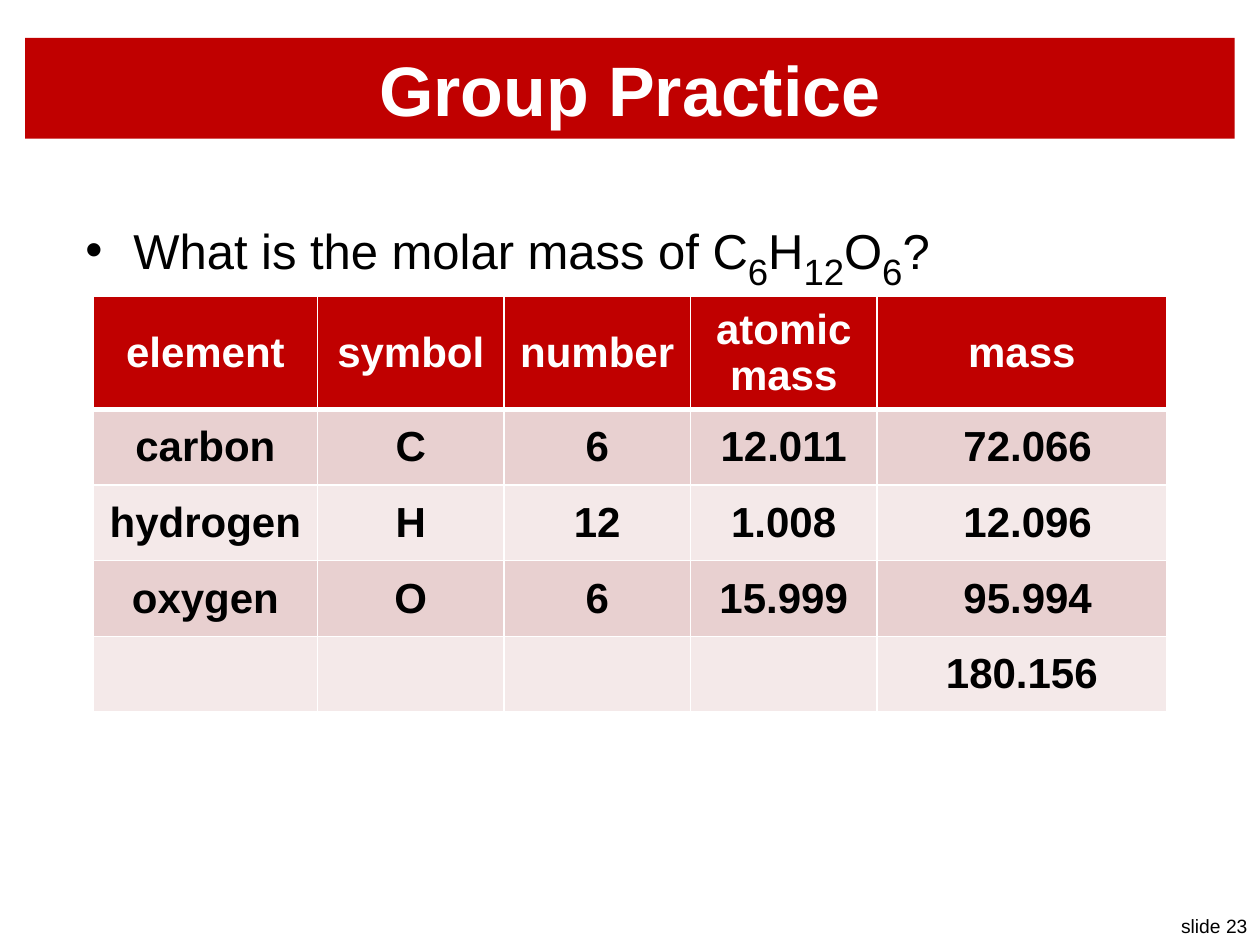
from dataclasses import dataclass

from lxml import etree
from pptx import Presentation
from pptx import util as u
from pptx.dml.color import RGBColor
from pptx.enum import shapes, text
from pptx.oxml.ns import qn


@dataclass(frozen=True)
class Theme:
    font: str = "Arial"
    red: str = "C00000"
    white: str = "FFFFFF"
    black: str = "000000"
    bands: tuple = ("E8D0D0", "F4E9E9")
    title: int = 40
    body: int = 28
    subscript: int = 36
    cell: int = 24
    footer: int = 11


T = Theme()
W, H = 10, 7.5
HEADER = ["element", "symbol", "number", "atomic mass", "mass"]
ROWS = [
    ["carbon", "C", "6", "12.011", " 72.066"],
    ["hydrogen", "H", "12", "1.008", " 12.096"],
    ["oxygen", "O", "6", "15.999", " 95.994"],
    ["", "", "", "", "180.156"],
]
COLUMNS = [1.78, 1.48, 1.48, 1.48, 2.3]
HEADER_HEIGHT, ROW_HEIGHT = 0.84, 0.6
QUESTION = [("What is the molar mass of C", False), ("6", True), ("H", False),
            ("12", True), ("O", False), ("6", True), ("?", False)]


def apply(obj, **formats):
    for name, value in formats.items():
        setattr(obj, name, value)


def inches(box):
    return [u.Inches(v) for v in box]


def paint(fill, color):
    fill.solid()
    fill.fore_color.rgb = RGBColor.from_string(color)


def add_run(p, words, size, color, bold=False):
    r = p.add_run()
    r.text = words
    apply(r.font, name=T.font, size=u.Pt(size), bold=bold)
    r.font.color.rgb = RGBColor.from_string(color)
    return r


def add_title(s, box):
    sp = s.shapes.add_shape(shapes.MSO_SHAPE.RECTANGLE, *inches(box))
    sp.shadow.inherit = False
    paint(sp.fill, T.red)
    sp.line.fill.background()
    tf = sp.text_frame
    apply(tf, word_wrap=True, vertical_anchor=text.MSO_ANCHOR.MIDDLE)
    p = tf.paragraphs[0]
    p.alignment = text.PP_ALIGN.CENTER
    add_run(p, "Group Practice", T.title, T.white, True)


def add_question(s, box):
    tf = s.shapes.add_textbox(*inches(box)).text_frame
    apply(tf, word_wrap=True, margin_top=u.Inches(0.22))
    p = tf.paragraphs[0]
    # Hanging bullet
    pPr = p._p.get_or_add_pPr()
    indent = u.Inches(0.38)
    pPr.set("marL", str(indent))
    pPr.set("indent", str(-indent))
    etree.SubElement(pPr, qn("a:buFont")).set("typeface", T.font)
    etree.SubElement(pPr, qn("a:buChar")).set("char", "•")
    # Formula with subscripts
    for words, is_sub in QUESTION:
        r = add_run(p, words, T.subscript if is_sub else T.body, T.black)
        if is_sub:
            r.font._element.set("baseline", "-25000")


def add_borders(cell, widths):
    tcPr = cell._tc.get_or_add_tcPr()
    for i, (side, width) in enumerate(widths.items()):
        ln = etree.Element(qn(f"a:ln{side}"), w=str(u.Pt(width)))
        fill = etree.SubElement(ln, qn("a:solidFill"))
        etree.SubElement(fill, qn("a:srgbClr")).set("val", T.white)
        tcPr.insert(i, ln)


def add_mass_table(s, box):
    grid = [HEADER] + ROWS
    table = s.shapes.add_table(len(grid), len(COLUMNS), *inches(box)).table
    for column, width in zip(table.columns, COLUMNS):
        column.width = u.Inches(width)
    for i, values in enumerate(grid):
        is_header = i == 0
        table.rows[i].height = u.Inches(HEADER_HEIGHT if is_header else ROW_HEIGHT)
        for j, value in enumerate(values):
            cell = table.cell(i, j)
            cell.vertical_anchor = text.MSO_ANCHOR.MIDDLE
            paint(cell.fill, T.red if is_header else T.bands[(i - 1) % 2])
            add_borders(cell, {"L": 1, "R": 1, "T": 3 if i == 1 else 1,
                               "B": 3 if is_header else 1})
            p = cell.text_frame.paragraphs[0]
            p.alignment = text.PP_ALIGN.CENTER
            if value:
                add_run(p, value, T.cell, T.white if is_header else T.black, True)


def add_slide_number(s, box):
    tf = s.shapes.add_textbox(*inches(box)).text_frame
    tf.word_wrap = False
    p = tf.paragraphs[0]
    p.alignment = text.PP_ALIGN.RIGHT
    add_run(p, "slide 23", T.footer, T.black)


def main():
    prs = Presentation()
    apply(prs, slide_width=u.Inches(W), slide_height=u.Inches(H))
    s = prs.slides.add_slide(prs.slide_layouts[6])
    paint(s.background.fill, T.white)
    add_slide_number(s, (0.925 * W, H - 0.29, 0.075 * W, 0.29))
    add_title(s, (0.02 * W, 0.04 * H, 0.96 * W, 0.8))
    add_question(s, (0.058 * W, 1.42, 0.885 * W, 0.71))
    table_width = sum(COLUMNS)
    table_height = HEADER_HEIGHT + ROW_HEIGHT * len(ROWS)
    add_mass_table(s, ((W - table_width) / 2, 2.35, table_width, table_height))
    prs.save("out.pptx")


if __name__ == "__main__":
    main()
